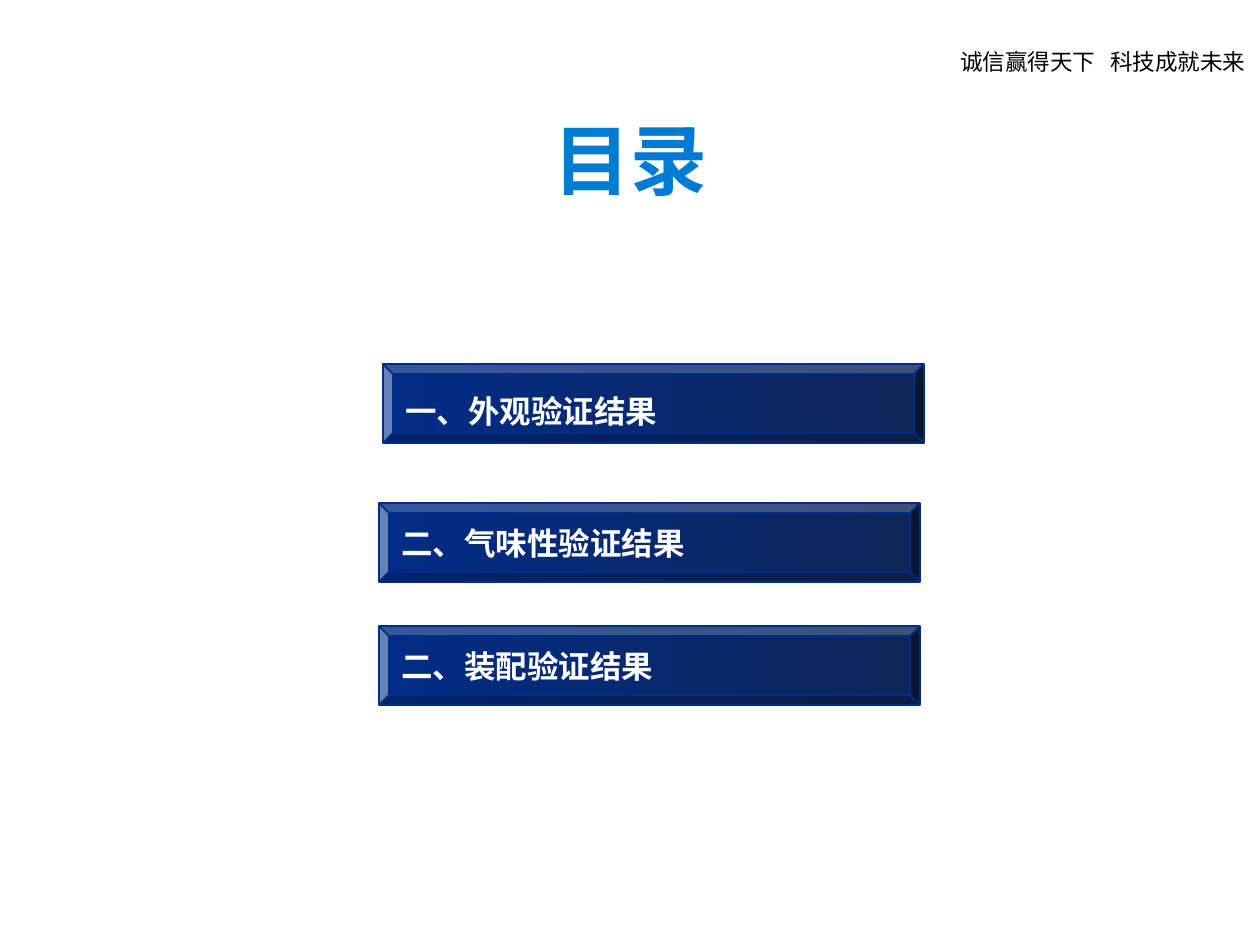
from dataclasses import dataclass

from lxml.etree import SubElement
from pptx import Presentation
from pptx.dml.color import RGBColor
from pptx.dml.fill import FillFormat
from pptx.enum.shapes import MSO_SHAPE
from pptx.enum.text import MSO_ANCHOR, MSO_AUTO_SIZE, PP_ALIGN
from pptx.oxml.ns import qn
from pptx.util import Emu, Pt

EMU_PER_PX = 914400 / 126
CJK_FONT = "Noto Sans CJK SC"
COLORS = {
    "title_start": "007BD3",
    "title_end": "034373",
    "bar_start": "012D86",
    "bar_end": "0E2557",
    "white": "FFFFFF",
    "black": "000000",
}


@dataclass(frozen=True)
class Bar:
    text: str
    left: int
    top: int
    line_spacing: int = 0  # points; 0 keeps single spacing


BAR_WIDTH, BAR_HEIGHT = 541, 79
BARS = [
    Bar("一、外观验证结果", 383, 364, 30),
    Bar("二、气味性验证结果", 379, 503),
    Bar("二、装配验证结果", 379, 626),
]


def px(length: int) -> Emu:
    return Emu(round(length * EMU_PER_PX))


def rgb(name: str) -> RGBColor:
    return RGBColor.from_string(COLORS[name])


def place(shape, left: int, top: int, width: int, height: int) -> None:
    shape.left, shape.top = px(left), px(top)
    shape.width, shape.height = px(width), px(height)


def set_gradient(fill: FillFormat, start: str, end: str) -> None:
    fill.gradient()
    for stop, name in zip(fill.gradient_stops, (start, end)):
        stop.color.rgb = rgb(name)
    # Run the gradient from left to right
    gradient = fill._xPr.find(qn("a:gradFill"))
    for child in list(gradient):
        if child.tag != qn("a:gsLst"):
            gradient.remove(child)
    SubElement(gradient, qn("a:lin"), ang="0", scaled="0")


def add_span(para, text: str, size: float, font: str = CJK_FONT,
             color: str = "", bold: bool = False):
    span = para.add_run()
    span.text = text
    span.font.size = Pt(size)
    span.font.bold = bold
    if color:
        span.font.color.rgb = rgb(color)
    span.font.name = font
    # Chinese glyphs take the East Asian typeface
    SubElement(span.font._element, qn("a:ea"), typeface=CJK_FONT)
    return span


def add_bar(page, bar: Bar) -> None:
    shape = page.shapes.add_shape(
        MSO_SHAPE.BEVEL, px(bar.left), px(bar.top), px(BAR_WIDTH), px(BAR_HEIGHT))
    shape.shadow.inherit = False
    set_gradient(shape.fill, "bar_start", "bar_end")
    shape.line.width = Pt(1)
    set_gradient(shape.line.fill, "bar_start", "bar_end")
    frame = shape.text_frame
    frame.word_wrap = True
    frame.vertical_anchor = MSO_ANCHOR.MIDDLE
    para = frame.paragraphs[0]
    para.alignment = PP_ALIGN.LEFT
    if bar.line_spacing:
        para.line_spacing = Pt(bar.line_spacing)
    add_span(para, bar.text, 18, color="white", bold=True)


def add_slogan(page) -> None:
    box = page.shapes.add_textbox(px(945), px(42), px(316), px(40))
    box.text_frame.word_wrap = False
    box.text_frame.auto_size = MSO_AUTO_SIZE.SHAPE_TO_FIT_TEXT
    para = box.text_frame.paragraphs[0]
    para.alignment = PP_ALIGN.CENTER
    add_span(para, "诚信赢得天下   科技成就未来", 12.9, color="black")


def set_title(page) -> None:
    title = page.shapes.title
    place(title, 541, 106, 209, 106)
    frame = title.text_frame
    frame.word_wrap = True
    frame.auto_size = MSO_AUTO_SIZE.SHAPE_TO_FIT_TEXT
    frame.vertical_anchor = MSO_ANCHOR.TOP
    para = frame.paragraphs[0]
    para.alignment = PP_ALIGN.LEFT
    para.line_spacing = 1.0
    span = add_span(para, "目录", 44, font="Arial", bold=True)
    set_gradient(span.font.fill, "title_start", "title_end")


def main() -> None:
    deck = Presentation()
    deck.slide_width, deck.slide_height = px(1260), px(945)
    page = deck.slides.add_slide(deck.slide_layouts[5])

    # Header slogan and title
    add_slogan(page)
    set_title(page)

    # Contents entries
    for bar in BARS:
        add_bar(page, bar)

    deck.save("out.pptx")


if __name__ == "__main__":
    main()
